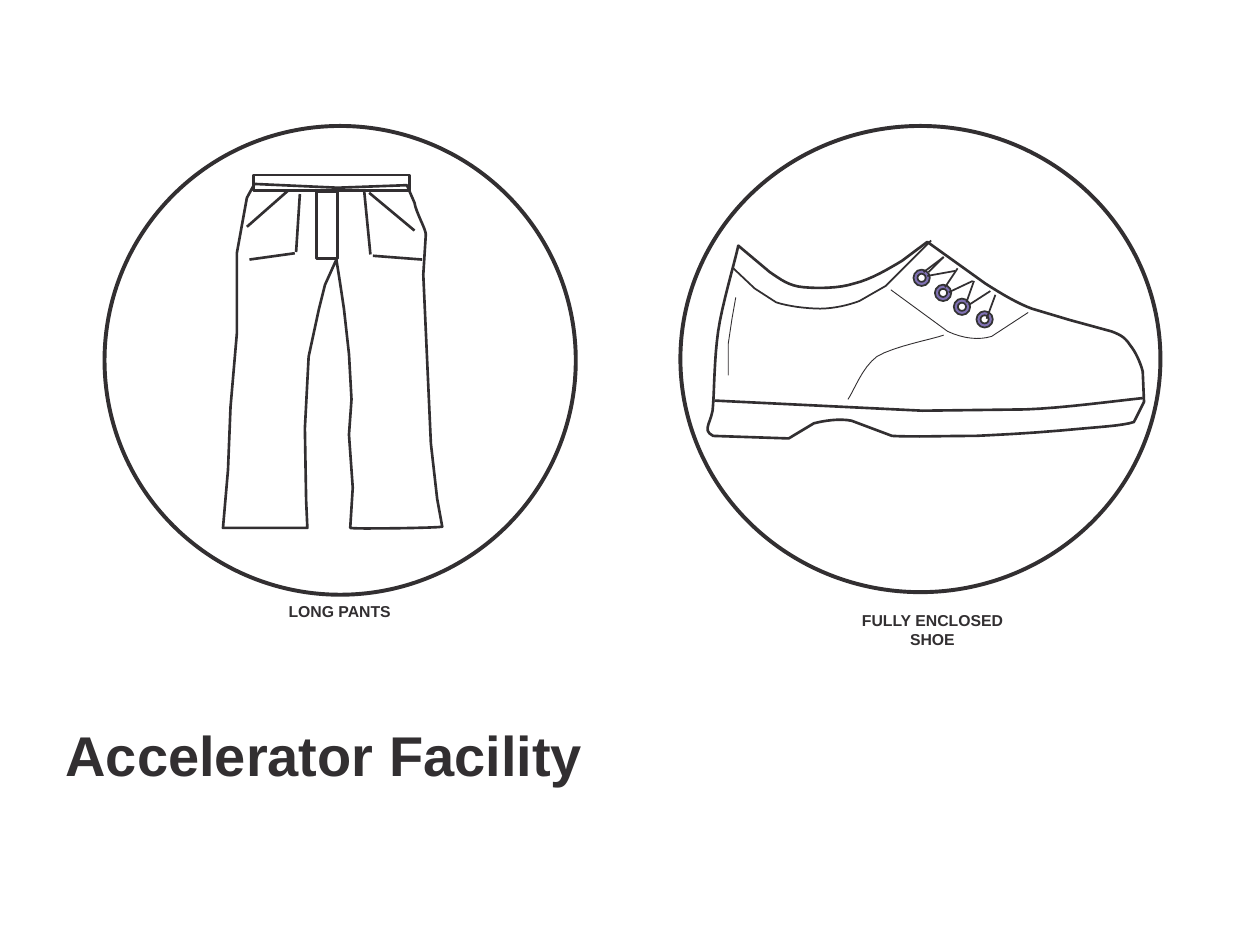
from lxml.etree import SubElement
from pptx import Presentation
from pptx.dml.color import RGBColor
from pptx.enum.shapes import MSO_CONNECTOR, MSO_SHAPE
from pptx.enum.text import MSO_ANCHOR, MSO_AUTO_SIZE, PP_ALIGN
from pptx.oxml.ns import qn
from pptx.util import Inches, Pt

COLORS = {"ink": "322F31", "eyelet": "8071B4", "eyelet_edge": "333333"}
CURVE_STEPS = 8

TROUSERS = [
    (1.19, 0.46), (1.85, 0.49), (2.4, 0.47), (2.46, 0.61),
    (2.47, 0.68, 2.55, 0.82, 2.55, 0.86), (2.53, 1.18), (2.59, 2.52),
    (2.64, 2.96), (2.68, 3.18), (2.68, 3.19, 1.95, 3.2, 1.95, 3.19),
    (1.97, 2.87), (1.94, 2.45), (1.96, 2.17), (1.94, 1.81), (1.9, 1.45),
    (1.87, 1.25), (1.84, 1.06), (1.75, 1.26), (1.7, 1.46), (1.62, 1.83),
    (1.59, 2.4), (1.6, 2.97), (1.61, 3.19), (0.94, 3.19), (0.98, 2.73),
    (1, 2.23), (1.05, 1.65), (1.05, 1.01), (1.13, 0.57),
]
POCKETS = [
    (1.46, 0.51, 1.13, 0.8), (2.1, 0.53, 2.46, 0.83), (1.55, 0.54, 1.52, 1),
    (1.51, 1.01, 1.15, 1.06), (2.06, 0.51, 2.11, 1.02), (2.13, 1.03, 2.52, 1.06),
]
FLY = (1.68, 0.52, 0.17, 0.53)
WAISTBAND = (1.18, 0.39, 1.24, 0.12)

SHOE = [
    (0.46, 0.95), (0.71, 1.16), (0.8, 1.22, 0.86, 1.27, 0.98, 1.28),
    (1.09, 1.29, 1.26, 1.29, 1.38, 1.25), (1.51, 1.22, 1.66, 1.13, 1.76, 1.07),
    (1.96, 0.92), (2.42, 1.25), (2.56, 1.34, 2.68, 1.41, 2.79, 1.45),
    (3.09, 1.54), (3.42, 1.63), (3.5, 1.66, 3.53, 1.68, 3.57, 1.74),
    (3.61, 1.79, 3.65, 1.87, 3.67, 1.95), (3.68, 2.19), (3.6, 2.35),
    (3.51, 2.38, 3.31, 2.39, 3.1, 2.41), (2.89, 2.43, 2.58, 2.45, 2.34, 2.46),
    (2.1, 2.46, 1.84, 2.47, 1.68, 2.46), (1.36, 2.34),
    (1.26, 2.32, 1.14, 2.34, 1.06, 2.36), (0.86, 2.48), (0.26, 2.46),
    (0.16, 2.41, 0.26, 2.35, 0.26, 2.21), (0.27, 2.07, 0.27, 1.84, 0.3, 1.63),
    (0.33, 1.42, 0.43, 1.09, 0.46, 0.95),
]
SOLE = [(0.27, 2.18), (1.92, 2.26), (2.74, 2.25), (3.03, 2.24, 3.48, 2.18, 3.67, 2.16)]
COLLAR = [
    (0.42, 1.13), (0.59, 1.29), (0.76, 1.4), (0.85, 1.43, 1, 1.45, 1.11, 1.45),
    (1.22, 1.45, 1.34, 1.42, 1.42, 1.39), (1.63, 1.27), (1.99, 0.91),
]
SEAMS = [
    [(1.67, 1.3), (2.12, 1.63), (2.25, 1.69, 2.37, 1.7, 2.47, 1.67), (2.76, 1.48)],
    [(0.44, 1.36), (0.41, 1.53), (0.38, 1.73), (0.38, 1.98)],
    [(2.09, 1.66), (2.01, 1.69, 1.69, 1.75, 1.56, 1.83),
     (1.44, 1.92, 1.38, 2.1, 1.33, 2.17)],
]
EYELETS = [(1.85, 1.14), (2.02, 1.26), (2.17, 1.37), (2.35, 1.47)]
LACES = [
    (2.09, 1.04, 1.93, 1.16), (2.09, 1.04, 1.97, 1.16), (1.96, 1.19, 2.18, 1.15),
    (2.2, 1.13, 2.1, 1.28), (2.13, 1.32, 2.32, 1.23), (2.33, 1.23, 2.27, 1.4),
    (2.29, 1.42, 2.46, 1.31), (2.5, 1.34, 2.43, 1.53),
]


def rgb(name):
    """Return the named colour."""
    return RGBColor.from_string(COLORS[name])


def flatten(path):
    """Turn points and six-number cubic curves into a list of points."""
    points = [path[0]]
    for step in path[1:]:
        if len(step) == 2:
            points.append(step)
            continue
        ends = [points[-1], step[:2], step[2:4], step[4:]]
        for i in range(1, CURVE_STEPS + 1):
            t = i / CURVE_STEPS
            weights = ((1 - t) ** 3, 3 * t * (1 - t) ** 2, 3 * t * t * (1 - t), t ** 3)
            points.append(tuple(sum(w * end[axis] for w, end in zip(weights, ends))
                                for axis in (0, 1)))
    return points


def style_shape(shape, width, fill=None, line="ink"):
    """Give a shape its outline and optional fill."""
    shape.shadow.inherit = False
    if fill:
        shape.fill.solid()
        shape.fill.fore_color.rgb = rgb(fill)
    else:
        shape.fill.background()
    shape.line.color.rgb = rgb(line)
    shape.line.width = Pt(width)


def draw_outline(shapes, box, path, width, close=False):
    """Draw a path placed from the corner of the box."""
    points = [(Inches(box[0] + x), Inches(box[1] + y)) for x, y in flatten(path)]
    builder = shapes.build_freeform(*points[0], scale=1.0)
    builder.add_line_segments(points[1:], close=close)
    style_shape(builder.convert_to_shape(), width)


def draw_preset(shapes, box, kind, frame, width, **colors):
    """Draw a preset shape placed from the corner of the box."""
    x, y, w, h = frame
    shape = shapes.add_shape(kind, Inches(box[0] + x), Inches(box[1] + y),
                             Inches(w), Inches(h))
    style_shape(shape, width, **colors)
    return shape


def draw_strokes(shapes, box, strokes, width):
    """Draw straight lines placed from the corner of the box."""
    left, top = box[:2]
    for x1, y1, x2, y2 in strokes:
        stroke = shapes.add_connector(MSO_CONNECTOR.STRAIGHT, Inches(left + x1),
                                      Inches(top + y1), Inches(left + x2), Inches(top + y2))
        stroke.line.color.rgb = rgb("ink")
        stroke.line.width = Pt(width)
        SubElement(stroke._element.spPr, qn("a:effectLst"))


def write_text(holder, text, size=9, align=PP_ALIGN.CENTER):
    """Write bold text, one paragraph for each line."""
    frame = holder.text_frame
    frame.word_wrap = True
    frame.auto_size = MSO_AUTO_SIZE.SHAPE_TO_FIT_TEXT
    frame.vertical_anchor = MSO_ANCHOR.TOP
    frame.text = text
    for paragraph in frame.paragraphs:
        paragraph.alignment = align
        font = paragraph.font
        font.name, font.size, font.bold = "Arial", Pt(size), True
        font.color.rgb = rgb("ink")


def add_badge(slide, box, caption, caption_box):
    """Start a pictogram group with its ring and caption."""
    shapes = slide.shapes.add_group_shape().shapes
    write_text(shapes.add_textbox(*map(Inches, caption_box)), caption)
    draw_preset(shapes, box, MSO_SHAPE.OVAL, (0, 0, *box[2:]), 2.25)
    return shapes


def add_pants(slide, box):
    """Place the long pants pictogram."""
    left, top, width, height = box
    shapes = add_badge(slide, box, "LONG PANTS",
                       (left + 0.37, top + height + 0.01, 2.99, 0.44))
    draw_outline(shapes, box, TROUSERS, 1.5, close=True)
    draw_strokes(shapes, box, POCKETS, 1.5)
    for panel in (FLY, WAISTBAND):
        draw_preset(shapes, box, MSO_SHAPE.RECTANGLE, panel, 1.5)


def add_shoe(slide, box):
    """Place the enclosed shoe pictogram."""
    left, top, width, height = box
    shapes = add_badge(slide, box, "FULLY ENCLOSED\nSHOE",
                       (left - 0.34, top + height + 0.1, 4.68, 0.7))
    draw_outline(shapes, box, SHOE, 1.5, close=True)
    draw_outline(shapes, box, SOLE, 1.5)
    draw_outline(shapes, box, COLLAR, 1)
    for x, y in EYELETS:
        eyelet = draw_preset(shapes, box, MSO_SHAPE.DONUT, (x, y, 0.13, 0.13), 1,
                             fill="eyelet", line="eyelet_edge")
        eyelet.adjustments[0] = 0.25
    draw_strokes(shapes, box, LACES, 1)
    for seam in SEAMS:
        draw_outline(shapes, box, seam, 0.5)


def add_title(slide, box):
    """Place the facility name in the title placeholder."""
    title = slide.shapes.title
    title.left, title.top, title.width, title.height = map(Inches, box)
    write_text(title, "Accelerator Facility", size=32, align=PP_ALIGN.LEFT)


def main():
    """Build and save the slide."""
    deck = Presentation()
    deck.slide_width, deck.slide_height = Inches(10), Inches(7.5)
    slide = deck.slides.add_slide(deck.slide_layouts[5])
    add_pants(slide, (0.83, 1, 3.74, 3.72))
    add_shoe(slide, (5.4, 1, 3.81, 3.7))
    add_title(slide, (0.42, 5.67, 6.67, 0.64))
    deck.save("out.pptx")


if __name__ == "__main__":
    main()
